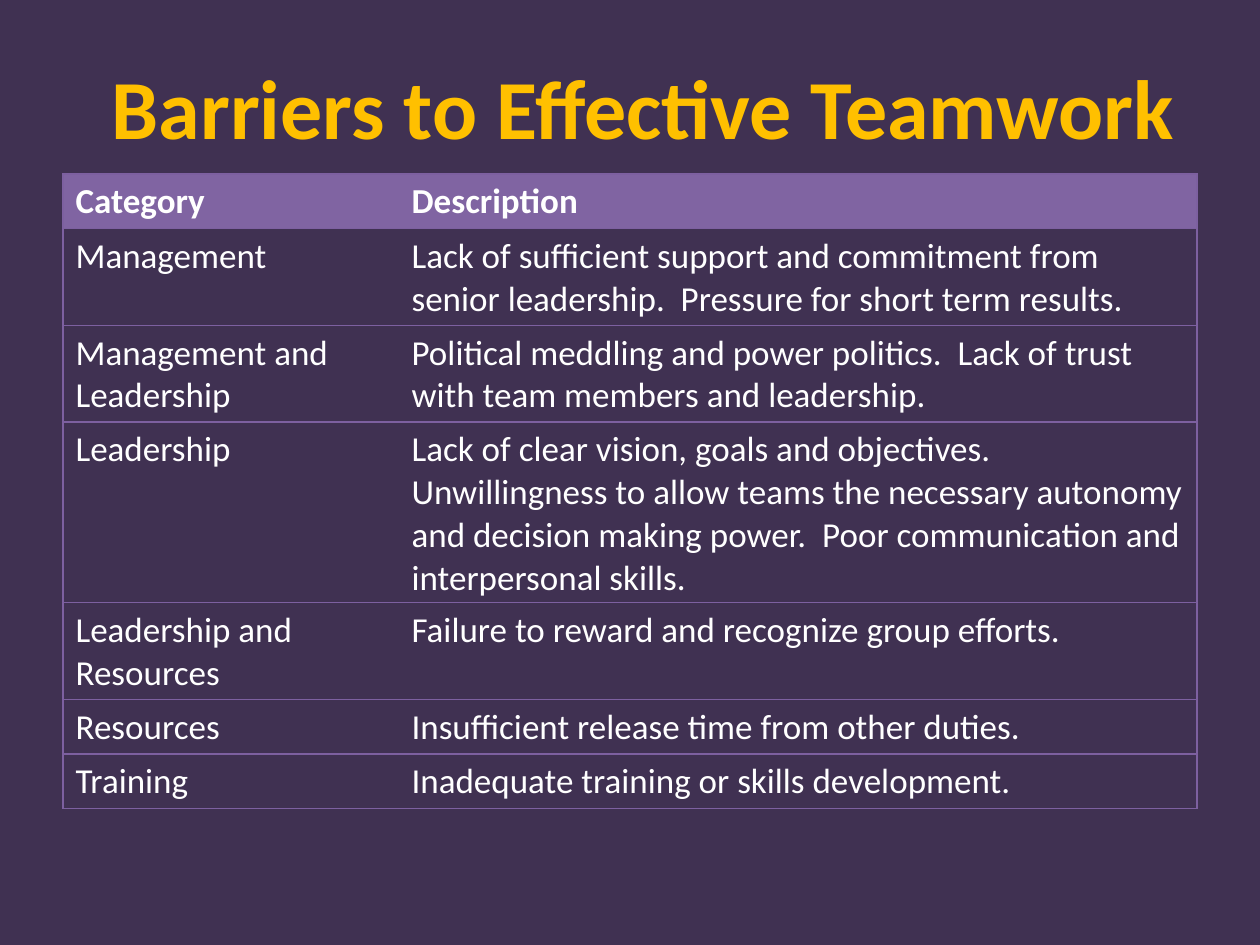
import pptx
import pptx.dml.color
import pptx.enum.text
import pptx.oxml
import pptx.oxml.ns
import pptx.util

Pt = pptx.util.Pt
FONT = "Calibri"
BACKGROUND = "403152"
GOLD = "FFC000"
WHITE = "FFFFFF"
HEADER_PURPLE = "8064A2"
RULE_PURPLE = "7D60A0"

BARRIERS = [
    ("Category", "Description", 1),
    ("Management", "Lack of sufficient support and commitment from senior leadership.  "
     "Pressure for short term results.", 2),
    ("Management and Leadership", "Political meddling and power politics.  "
     "Lack of trust with team members and leadership.", 2),
    ("Leadership", "Lack of clear vision, goals and objectives.  Unwillingness to allow teams "
     "the necessary autonomy and decision making power.  Poor communication and "
     "interpersonal skills.", 4),
    ("Leadership and Resources", "Failure to reward and recognize group efforts.", 2),
    ("Resources", "Insufficient release time from other duties.", 1),
    ("Training", "Inadequate training or skills development.", 1),
]


def rgb(hex_color):
    """Return the colour for a hex string."""
    return pptx.dml.color.RGBColor.from_string(hex_color)


def write_text(text_frame, text, size, color, bold):
    """Fill a text frame with one formatted paragraph."""
    text_frame.text = text
    font = text_frame.paragraphs[0].runs[0].font
    font.name, font.size, font.bold = FONT, Pt(size), bold
    font.color.rgb = rgb(color)


def set_borders(cell, visible_sides):
    """Rule the named sides of a cell and clear the others."""
    properties = cell._tc.get_or_add_tcPr()
    for position, side in enumerate("LRTB"):
        if side in visible_sides:
            paint = f'<a:solidFill><a:srgbClr val="{RULE_PURPLE}"/></a:solidFill>'
        else:
            paint = "<a:noFill/>"
        border = pptx.oxml.parse_xml(
            f'<a:ln{side} {pptx.oxml.ns.nsdecls("a")} w="{Pt(0.75)}">{paint}</a:ln{side}>')
        properties.insert(position, border)


def add_title(slide, text):
    """Place and format the slide title."""
    title = slide.shapes.title
    title.left, title.top, title.width, title.height = Pt(42.5), Pt(28), Pt(650), Pt(65.5)
    write_text(title.text_frame, text, 48, GOLD, True)
    title.text_frame.word_wrap = True
    title.text_frame.auto_size = pptx.enum.text.MSO_AUTO_SIZE.SHAPE_TO_FIT_TEXT
    title.text_frame.vertical_anchor = pptx.enum.text.MSO_ANCHOR.TOP
    title.text_frame.paragraphs[0].alignment = pptx.enum.text.PP_ALIGN.CENTER


def add_barriers_table(slide, barriers):
    """Add the table of barriers, with row heights set by line count."""
    heights = [7.2 + 24 * lines for _, _, lines in barriers]
    table = slide.shapes.add_table(
        len(barriers), 2, Pt(36), Pt(99.4), Pt(648), Pt(sum(heights))).table
    table.horz_banding = False
    table.columns[0].width, table.columns[1].width = Pt(192), Pt(456)
    for row_index, (category, description, _) in enumerate(barriers):
        table.rows[row_index].height = Pt(heights[row_index])
        is_header = row_index == 0
        for column, text in enumerate((category, description)):
            cell = table.cell(row_index, column)
            write_text(cell.text_frame, text, 20, WHITE, is_header)
            if is_header:
                cell.fill.solid()
                cell.fill.fore_color.rgb = rgb(HEADER_PURPLE)
            else:
                cell.fill.background()
            set_borders(cell, "TB" + "LR"[column])


def main():
    """Build and save the slide."""
    presentation = pptx.Presentation()
    presentation.slide_width, presentation.slide_height = Pt(720), Pt(540)
    slide = presentation.slides.add_slide(presentation.slide_layouts[5])
    slide.background.fill.solid()
    slide.background.fill.fore_color.rgb = rgb(BACKGROUND)
    add_title(slide, "Barriers to Effective Teamwork")
    add_barriers_table(slide, BARRIERS)
    presentation.save("out.pptx")


if __name__ == "__main__":
    main()
